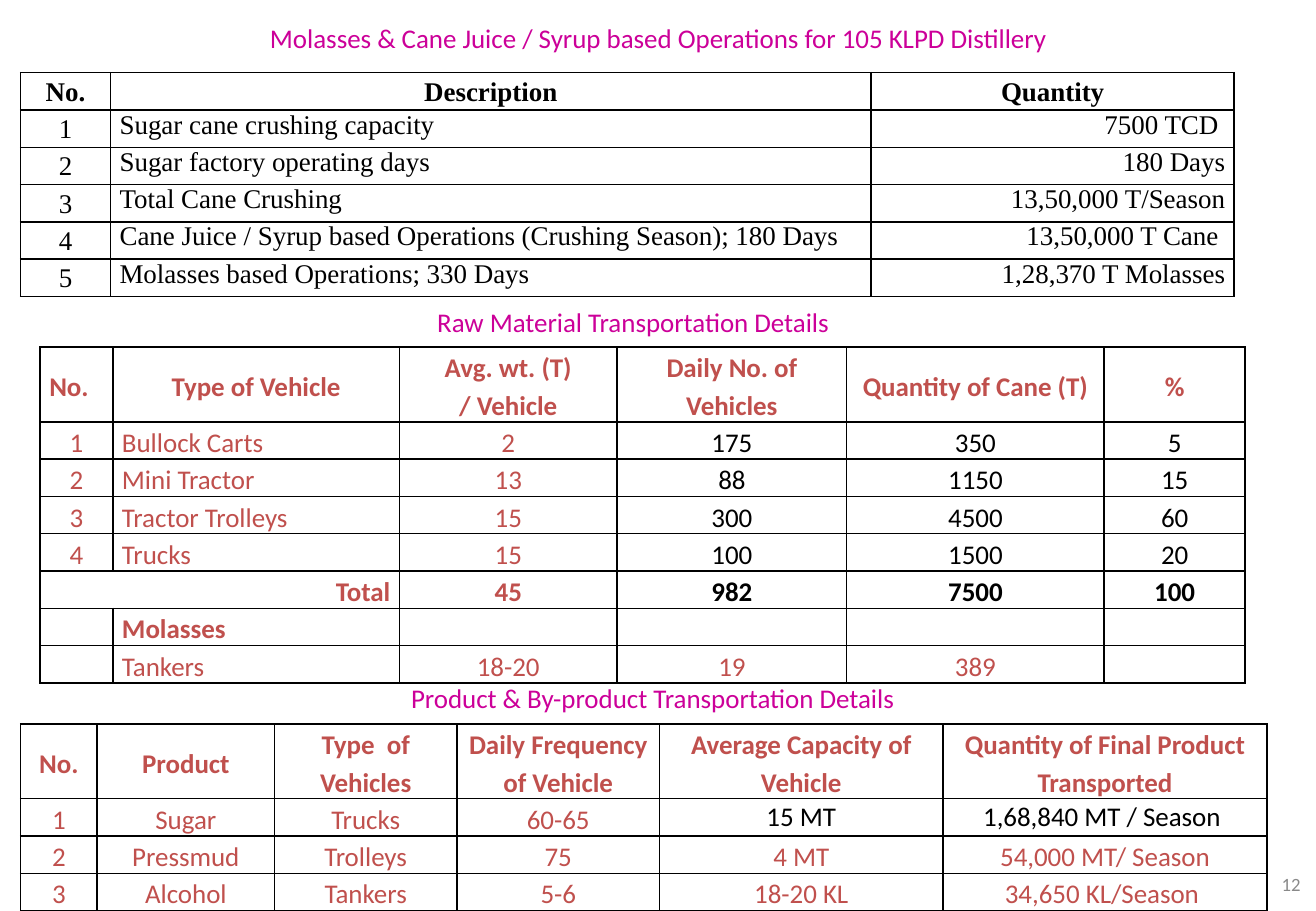
"""Build the slide of distillery operations and transport tables."""
from dataclasses import dataclass
from typing import Callable

import pptx
import pptx.dml.color
import pptx.enum.text
import pptx.oxml
import pptx.oxml.ns
import pptx.util
from pptx.util import Cm

Color = pptx.dml.color.RGBColor
Align = pptx.enum.text.PP_ALIGN
Anchor = pptx.enum.text.MSO_ANCHOR

BLACK = Color(0x00, 0x00, 0x00)
RED = Color(0xC0, 0x50, 0x4D)
MAGENTA = Color(0xCC, 0x00, 0x99)
GREY = Color(0x89, 0x89, 0x89)

ROW_HEIGHT = 0.78
CELL_MARGIN = 0.19


@dataclass(frozen=True)
class Look:
    """Format of the text in one cell."""
    align: Align = Align.CENTER
    anchor: Anchor = Anchor.MIDDLE
    color: Color = RED
    bold: bool = False
    spacing: float = 1.15


@dataclass(frozen=True)
class Label:
    """Text box with its place in centimetres."""
    text: str
    left: float
    top: float
    width: float
    height: float
    align: Align = Align.CENTER
    anchor: Anchor = Anchor.TOP
    size: float = 16
    color: Color = MAGENTA
    wrap: bool = True


@dataclass(frozen=True)
class Grid:
    """Table with its place in centimetres and a rule for cell formats."""
    left: float
    top: float
    widths: list[float]
    header_lines: int
    rows: list[list[str]]
    look: Callable[[int, int], Look]
    font: str = "Calibri"
    total_row: int = 0


def operations_look(row: int, column: int) -> Look:
    """Return the cell format of the operations table."""
    if row == 0 or column == 0:
        return Look(anchor=Anchor.TOP, color=BLACK, bold=row == 0)
    align = Align.LEFT if column == 1 else Align.RIGHT
    return Look(align, Anchor.TOP, BLACK, spacing=1.0)


def vehicles_look(row: int, column: int) -> Look:
    """Return the cell format of the raw material table."""
    align = Align.CENTER
    if (row, column) == (5, 0):
        align = Align.RIGHT
    elif (row, column) == (0, 0) or (row > 0 and column == 1):
        align = Align.LEFT
    color = BLACK if 1 <= row <= 5 and column >= 3 else RED
    return Look(align, color=color, bold=row in (0, 5, 6))


def products_look(row: int, column: int) -> Look:
    """Return the cell format of the product table."""
    if row == 1 and column >= 4:
        return Look(color=BLACK, spacing=1.0)
    return Look(bold=row == 0)


LABELS = [
    Label("12", 26.47, 17.98, 0.97, 1.02, Align.RIGHT, Anchor.MIDDLE, 11.1, GREY),
    Label("Molasses & Cane Juice / Syrup based Operations for 105 KLPD Distillery",
          5.28, 0.33, 16.97, 0.94),
    Label("Raw Material Transportation Details ", 8.89, 6.27, 9.09, 0.94, Align.JUSTIFY),
    Label("Product & By-product Transportation Details", 8.26, 14.17, 10.77, 0.86,
          anchor=Anchor.MIDDLE, wrap=False),
]

GRIDS = [
    Grid(0.43, 1.52, [1.88, 15.9, 7.59], 1, [
        ["No.", "Description", "Quantity"],
        ["1", "Sugar cane crushing capacity", "7500 TCD "],
        ["2", "Sugar factory operating days", "180 Days"],
        ["3", "Total Cane Crushing", "13,50,000 T/Season"],
        ["4", "Cane Juice / Syrup based Operations (Crushing Season); 180 Days",
         "13,50,000 T Cane "],
        ["5", "Molasses based Operations; 330 Days", "1,28,370 T Molasses"],
    ], operations_look, "Times New Roman"),
    Grid(0.84, 7.26, [1.52, 5.99, 4.55, 4.8, 5.38, 2.95], 2, [
        ["No.", "Type of Vehicle", "Avg. wt. (T)\n/ Vehicle", "Daily No. of Vehicles",
         "Quantity of Cane (T)", "%"],
        ["1", "Bullock Carts", "2", "175", "350", "5"],
        ["2", "Mini Tractor", "13", "88", "1150", "15"],
        ["3", "Tractor Trolleys", "15", "300", "4500", "60"],
        ["4", "Trucks", "15", "100", "1500", "20"],
        ["Total", "", "45", "982", "7500", "100"],
        ["", "Molasses", "", "", "", ""],
        ["", "Tankers", "18-20", "19", "389", ""],
    ], vehicles_look, total_row=5),
    Grid(0.43, 15.14, [1.6, 3.71, 3.81, 4.24, 5.92, 6.78], 2, [
        ["No.", "Product", "Type  of Vehicles", "Daily Frequency of Vehicle",
         "Average Capacity of Vehicle", "Quantity of Final Product\nTransported"],
        ["1", "Sugar", "Trucks", "60-65", "15 MT", "1,68,840 MT / Season "],
        ["2", "Pressmud", "Trolleys", "75", "4 MT", "54,000 MT/ Season"],
        ["3", "Alcohol", "Tankers", "5-6", "18-20 KL", "34,650 KL/Season "],
    ], products_look),
]


def write_text(frame, text: str, *, font: str = "Calibri", size: float = 16,
               color: Color = BLACK, bold: bool = False,
               align: Align = Align.LEFT, spacing: float = 1.0) -> None:
    """Write one paragraph per line of text."""
    for index, line in enumerate(text.split("\n")):
        para = frame.add_paragraph() if index else frame.paragraphs[0]
        para.alignment = align
        para.line_spacing = spacing
        span = para.add_run()
        span.text = line
        span.font.name = font
        span.font.size = pptx.util.Pt(size)
        span.font.bold = bold
        span.font.color.rgb = color


def draw_borders(cell) -> None:
    """Give a cell thin black lines on its four sides."""
    properties = cell._tc.get_or_add_tcPr()
    for index, side in enumerate(("lnL", "lnR", "lnT", "lnB")):
        properties.insert(index, pptx.oxml.parse_xml(
            f'<a:{side} {pptx.oxml.ns.nsdecls("a")} w="12700"><a:solidFill>'
            f'<a:srgbClr val="{BLACK}"/></a:solidFill></a:{side}>'))


def draw_label(page, label: Label) -> None:
    """Draw a text box."""
    box = page.shapes.add_textbox(
        Cm(label.left), Cm(label.top), Cm(label.width), Cm(label.height))
    box.text_frame.word_wrap = label.wrap
    box.text_frame.vertical_anchor = label.anchor
    write_text(box.text_frame, label.text, size=label.size, color=label.color,
               align=label.align)


def draw_grid(page, grid: Grid) -> None:
    """Draw a table."""
    heights = [ROW_HEIGHT * grid.header_lines] + [ROW_HEIGHT] * (len(grid.rows) - 1)
    table = page.shapes.add_table(
        len(heights), len(grid.widths), Cm(grid.left), Cm(grid.top),
        Cm(sum(grid.widths)), Cm(sum(heights))).table
    table.first_row = table.horz_banding = False
    for column, width in zip(table.columns, grid.widths):
        column.width = Cm(width)
    for row, height in zip(table.rows, heights):
        row.height = Cm(height)
    for i, texts in enumerate(grid.rows):
        for j, text in enumerate(texts):
            cell, look = table.cell(i, j), grid.look(i, j)
            cell.margin_left = cell.margin_right = Cm(CELL_MARGIN)
            cell.margin_top = cell.margin_bottom = Cm(0)
            cell.vertical_anchor = look.anchor
            cell.fill.background()
            draw_borders(cell)
            if text:
                write_text(cell.text_frame, text, font=grid.font, color=look.color,
                           bold=look.bold, align=look.align, spacing=look.spacing)
    if grid.total_row:
        table.cell(grid.total_row, 0).merge(table.cell(grid.total_row, 1))


def main() -> None:
    """Build and save the deck."""
    deck = pptx.Presentation()
    deck.slide_width, deck.slide_height = Cm(27.51), Cm(19.05)
    page = deck.slides.add_slide(deck.slide_layouts[6])
    for label in LABELS:
        draw_label(page, label)
    for grid in GRIDS:
        draw_grid(page, grid)
    deck.save("out.pptx")


if __name__ == "__main__":
    main()
